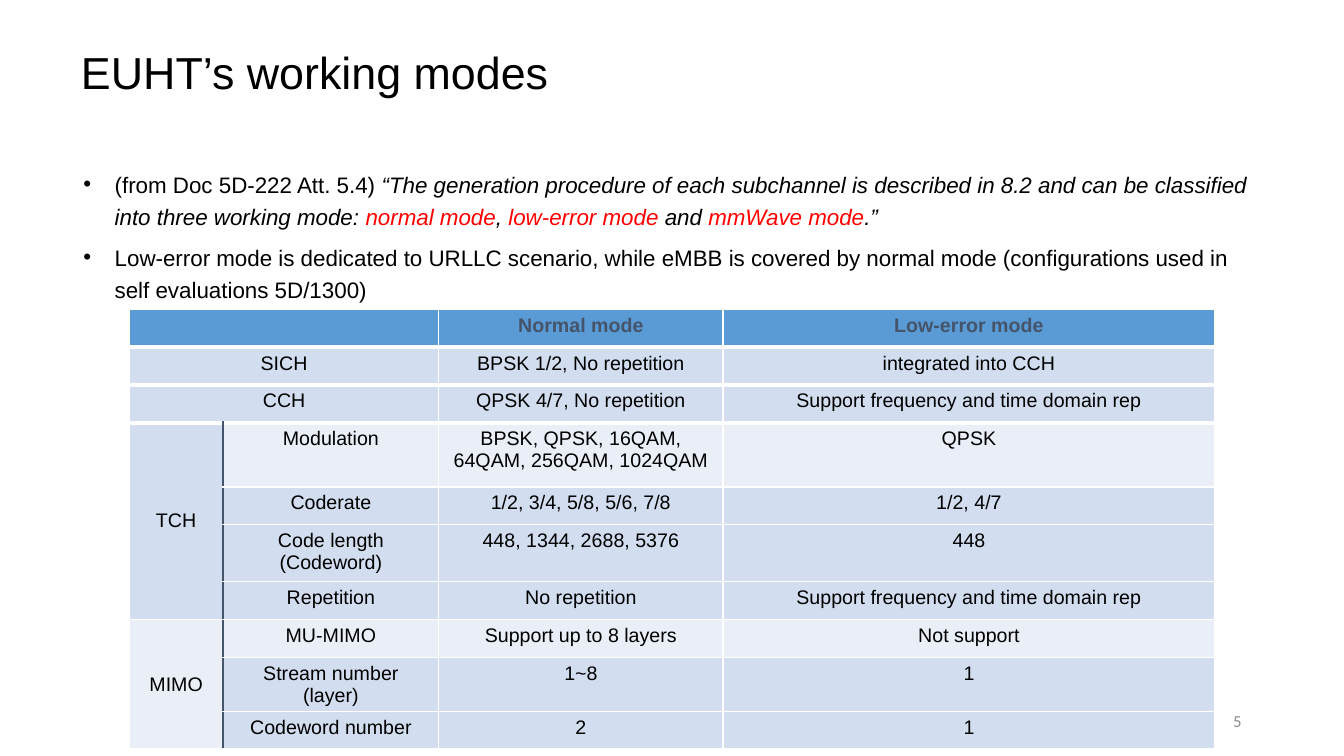
from lxml.etree import SubElement
from pptx import Presentation
from pptx.dml.color import RGBColor as Color
from pptx.enum.text import MSO_ANCHOR as Anchor, MSO_AUTO_SIZE as AutoSize, PP_ALIGN as Align
from pptx.oxml.ns import qn
from pptx.util import Cm, Pt

COLORS = {
    "black": "000000", "red": "FF0000", "white": "FFFFFF", "slate": "44546A",
    "header": "5B9BD5", "band": "D2DEEF", "light": "EAEFF7", "gray": "8C8C8C",
}
TITLE = "EUHT’s working modes"
BULLETS = [
    [
        ("(from Doc 5D-222 Att. 5.4) ", "black", False),
        ("“The generation procedure of each subchannel is described in 8.2 and can be "
         "classified into three working mode: ", "black", True),
        ("normal mode", "red", True),
        (", ", "black", True),
        ("low-error mode ", "red", True),
        ("and ", "black", True),
        ("mmWave mode", "red", True),
        (".”", "black", True),
    ],
    [
        ("Low-error mode is dedicated to URLLC scenario, while eMBB is covered by normal mode "
         "(configurations used in self evaluations 5D/1300)", "black", False),
    ],
]
MODES = [
    ("", "", "Normal mode", "Low-error mode"),
    ("SICH", "", "BPSK 1/2, No repetition", "integrated into CCH"),
    ("CCH", "", "QPSK 4/7, No repetition", "Support frequency and time domain rep"),
    ("TCH", "Modulation", "BPSK, QPSK, 16QAM, 64QAM, 256QAM, 1024QAM", "QPSK"),
    ("", "Coderate", "1/2, 3/4, 5/8, 5/6, 7/8", "1/2, 4/7"),
    ("", "Code length (Codeword)", "448, 1344, 2688, 5376", "448"),
    ("", "Repetition", "No repetition", "Support frequency and time domain rep"),
    ("MIMO", "MU-MIMO", "Support up to 8 layers", "Not support"),
    ("", "Stream number (layer)", "1~8", "1"),
    ("", "Codeword number", "2", "1"),
]
MERGES = [((0, 0), (0, 1)), ((1, 0), (1, 1)), ((2, 0), (2, 1)), ((3, 0), (6, 0)), ((7, 0), (9, 0))]
COLUMN_WIDTHS = [2.36, 5.44, 7.16, 12.4]
ROW_HEIGHT = 0.95
TALL_ROWS = {3: 1.62, 5: 1.44}
GROUP_START = 3
LIGHT_CELLS = {(3, 1), (3, 2), (3, 3), (7, 0), (7, 1), (7, 2), (7, 3), (8, 0), (9, 0)}


def add_run(paragraph, text, size, color, font="Arial", bold=False, italic=False):
    run = paragraph.add_run()
    run.text = text
    run.font.name = font
    run.font.size = Pt(size)
    run.font.bold = bold
    run.font.italic = italic
    run.font.color.rgb = Color.from_string(COLORS[color])


def place(shape, left, top, width, height, anchor=Anchor.TOP):
    shape.left, shape.top, shape.width, shape.height = Cm(left), Cm(top), Cm(width), Cm(height)
    frame = shape.text_frame
    frame.margin_left = frame.margin_top = frame.margin_right = frame.margin_bottom = 0
    frame.word_wrap = True
    frame.auto_size = AutoSize.NONE
    frame.vertical_anchor = anchor
    return frame


def add_border(cell, side, color, width):
    line = SubElement(cell._tc.get_or_add_tcPr(), qn(f"a:ln{side}"), w=str(Pt(width)))
    fill = SubElement(line, qn("a:solidFill"))
    SubElement(fill, qn("a:srgbClr"), val=COLORS[color])


def format_cell(cell, row, column, text):
    grouped = row >= GROUP_START
    add_border(cell, "L", "slate" if grouped and column == 1 else "white", 1)
    add_border(cell, "R", "slate" if grouped and column == 0 else "white", 1)
    add_border(cell, "T", "white", 3 if 0 < row <= GROUP_START else 1)
    add_border(cell, "B", "white", 3 if row < GROUP_START else 1)
    fill = "header" if row == 0 else "light" if (row, column) in LIGHT_CELLS else "band"
    cell.fill.solid()
    cell.fill.fore_color.rgb = Color.from_string(COLORS[fill])
    cell.vertical_anchor = Anchor.MIDDLE if grouped and column == 0 else Anchor.TOP
    paragraph = cell.text_frame.paragraphs[0]
    paragraph.alignment = Align.CENTER
    paragraph.font.size = Pt(14)
    if text:
        add_run(paragraph, text, 14, "slate" if row == 0 else "black", bold=row == 0)


def add_modes_table(slide):
    heights = [TALL_ROWS.get(row, ROW_HEIGHT) for row in range(len(MODES))]
    table = slide.shapes.add_table(
        len(MODES), len(COLUMN_WIDTHS), Cm(3.26), Cm(7.8), Cm(sum(COLUMN_WIDTHS)), Cm(sum(heights))
    ).table
    table.first_row = table.horz_banding = False
    for column, width in zip(table.columns, COLUMN_WIDTHS):
        column.width = Cm(width)
    for row, height in zip(table.rows, heights):
        row.height = Cm(height)
    for row, texts in enumerate(MODES):
        for column, text in enumerate(texts):
            format_cell(table.cell(row, column), row, column, text)
    for first, last in MERGES:
        table.cell(*first).merge(table.cell(*last))


def main():
    presentation = Presentation()
    presentation.slide_width, presentation.slide_height = Cm(33.87), Cm(19.05)
    slide = presentation.slides.add_slide(presentation.slide_layouts[1])

    paragraph = place(slide.shapes.title, 2.04, 1.27, 29.82, 2.77).paragraphs[0]
    paragraph.alignment = Align.LEFT
    paragraph.line_spacing = Pt(34.3)
    add_run(paragraph, TITLE, 32, "black")

    body = place(slide.placeholders[1], 2.06, 4.17, 29.79, 3.63)
    for index, runs in enumerate(BULLETS):
        paragraph = body.add_paragraph() if index else body.paragraphs[0]
        paragraph.line_spacing = 1.2
        paragraph.space_before = Pt(6)
        properties = paragraph._p.get_or_add_pPr()
        properties.set("marL", str(Cm(0.83)))
        properties.set("indent", str(Cm(-0.79)))
        SubElement(properties, qn("a:buFont"), typeface="Arial")
        SubElement(properties, qn("a:buChar"), char="•")
        for text, color, italic in runs:
            add_run(paragraph, text, 16, color, italic=italic)

    add_modes_table(slide)

    number_box = slide.shapes.add_textbox(0, 0, 0, 0)
    number = place(number_box, 23.92, 17.66, 7.62, 1.01, Anchor.MIDDLE)
    number.margin_right = Cm(0.25)
    number.paragraphs[0].alignment = Align.RIGHT
    add_run(number.paragraphs[0], "5", 12, "gray", font="Calibri")

    presentation.save("out.pptx")


if __name__ == "__main__":
    main()
